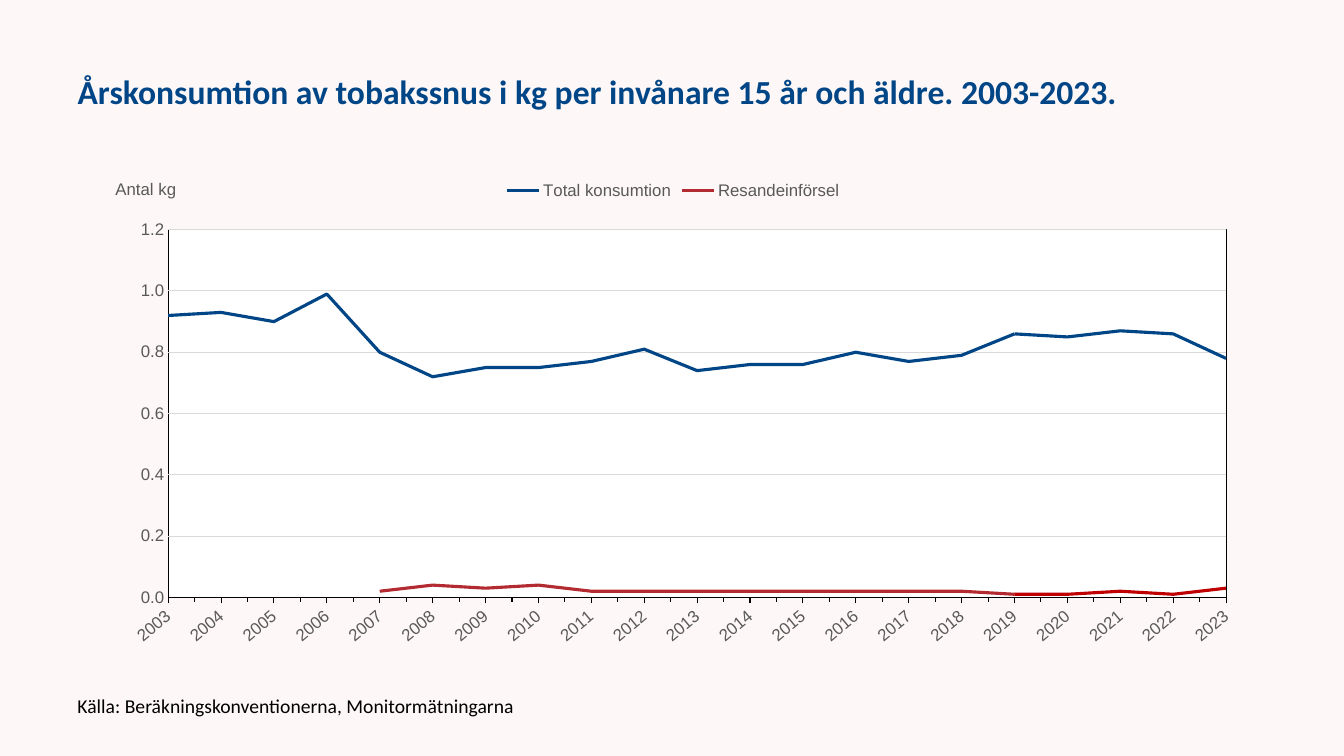
from lxml import etree
from pptx import Presentation
from pptx import util as u
from pptx.chart.data import CategoryChartData
from pptx.dml.color import RGBColor
from pptx.enum import chart as ch, text as t

HUES = {"back": "FEF7F7", "blue": "004687", "red": "B32B31", "dark": "C00000",
        "grey": "595959", "grid": "D9D9D9", "black": "000000", "white": "FFFFFF"}
TITLE = "Årskonsumtion av tobakssnus i kg per invånare 15 år och äldre. 2003-2023."
SOURCE = "Källa: Beräkningskonventionerna, Monitormätningarna"
UNIT = "Antal kg"
YEARS = range(2003, 2024)
LINES = [
    ("Total konsumtion", "blue", 2003,
     [0.92, 0.93, 0.9, 0.99, 0.8, 0.72, 0.75, 0.75, 0.77, 0.81, 0.74,
      0.76, 0.76, 0.8, 0.77, 0.79, 0.86]),
    ("Series 2", "blue", 2019, [0.86, 0.85, 0.87, 0.86, 0.78]),
    ("Resandeinförsel", "red", 2007,
     [0.02, 0.04, 0.03, 0.04, 0.02, 0.02, 0.02, 0.02, 0.02, 0.02, 0.02, 0.02, 0.01]),
    ("Series 4", "dark", 2019, [0.01, 0.01, 0.02, 0.01, 0.03]),
]
HIDDEN = (1, 3)
WIDE, HIGH, LEFT = 13.33, 7.5, 0.67
SPOTS = {"title": (LEFT, 0.3, 12, 1.25), "chart": (LEFT, 1.69, 12.02, 4.95),
         "source": (LEFT, 6.83, 6, 0.37)}
PLOT = {"layoutTarget": "inner", "xMode": "edge", "yMode": "edge",
        "x": 0.083, "y": 0.119, "w": 0.873, "h": 0.737}
LABEL = {"xMode": "edge", "yMode": "edge", "x": 0.037, "y": 0.01}
NS = {"c": "http://schemas.openxmlformats.org/drawingml/2006/chart",
      "a": "http://schemas.openxmlformats.org/drawingml/2006/main"}


def color(name):
    return RGBColor.from_string(HUES[name])


def setall(item, **values):
    for key, value in values.items():
        setattr(item, key, value)


def style(font, hue, size, name="Arial", bold=False):
    setall(font, size=u.Pt(size), name=name, bold=bold)
    font.color.rgb = color(hue)


def stroke(line, hue, width):
    line.color.rgb = color(hue)
    line.width = u.Pt(width)


def node(body):
    spaces = " ".join(f'xmlns:{key}="{uri}"' for key, uri in NS.items())
    return etree.fromstring(f"<c:box {spaces}>{body}</c:box>")[0]


def place(parent, spot, index):
    for old in parent.findall("c:layout", NS):
        parent.remove(old)
    body = "".join(f'<c:{key} val="{value}"/>' for key, value in spot.items())
    parent.insert(index, node(f"<c:layout><c:manualLayout>{body}</c:manualLayout></c:layout>"))


def write(shape, words, hue, size, bold=False):
    frame = shape.text_frame
    setall(frame, text=words, word_wrap=True, vertical_anchor=t.MSO_ANCHOR.MIDDLE)
    para = frame.paragraphs[0]
    setall(para, line_spacing=0.9, alignment=t.PP_ALIGN.LEFT)
    style(para.runs[0].font, hue, size, "Calibri", bold)


def draw(slide):
    data = CategoryChartData(number_format="0.00")
    data.categories = [str(year) for year in YEARS]
    for name, _, start, values in LINES:
        before = [None] * (start - YEARS[0])
        after = [None] * (len(YEARS) - len(before) - len(values))
        data.add_series(name, before + values + after)
    box = [u.Inches(n) for n in SPOTS["chart"]]
    chart = slide.shapes.add_chart(ch.XL_CHART_TYPE.LINE, *box, data).chart
    style(chart.font, "black", 12)
    setall(chart, has_title=False, has_legend=True)
    chart.plots[0].vary_by_categories = False
    for series, (_, hue, _, _) in zip(chart.plots[0].series, LINES):
        series.smooth = False
        stroke(series.format.line, hue, 2.25)

    legend = chart.legend
    setall(legend, position=ch.XL_LEGEND_POSITION.TOP, include_in_layout=False)
    style(legend.font, "grey", 12)
    mark = chart.element.find(".//c:legendPos", NS)
    for index in reversed(HIDDEN):
        mark.addnext(node(f'<c:legendEntry><c:idx val="{index}"/><c:delete val="1"/></c:legendEntry>'))

    years, kilos = chart.category_axis, chart.value_axis
    ticks = ch.XL_TICK_MARK
    setall(years, major_tick_mark=ticks.OUTSIDE, minor_tick_mark=ticks.OUTSIDE,
           has_major_gridlines=False)
    setall(kilos, major_tick_mark=ticks.NONE, minor_tick_mark=ticks.NONE,
           minimum_scale=0, maximum_scale=1.2, major_unit=0.2, has_major_gridlines=True)
    setall(kilos.tick_labels, number_format="0.0", number_format_is_linked=False)
    for axis in (years, kilos):
        axis.crosses = ch.XL_AXIS_CROSSES.AUTOMATIC
        style(axis.tick_labels.font, "grey", 12)
    stroke(years.format.line, "black", 0.75)
    kilos.format.line.fill.background()
    stroke(kilos.major_gridlines.format.line, "grid", 0.75)
    chart.element.find(".//c:catAx/c:txPr/a:bodyPr", NS).set("rot", str(-40 * 60000))
    chart.element.find(".//c:valAx/c:crosses", NS).addnext(
        node('<c:crossBetween val="midCat"/>'))

    frame = years.axis_title.text_frame
    frame.text = UNIT
    style(frame.paragraphs[0].runs[0].font, "grey", 12)
    place(chart.element.find(".//c:catAx/c:title", NS), LABEL, 1)

    area = chart.element.find(".//c:plotArea", NS)
    place(area, PLOT, 0)
    area.append(node(
        f'<c:spPr><a:solidFill><a:srgbClr val="{HUES["white"]}"/></a:solidFill>'
        f'<a:ln w="{u.Pt(0.75)}"><a:solidFill><a:srgbClr val="{HUES["black"]}"/>'
        '</a:solidFill></a:ln></c:spPr>'))
    chart.element.find("c:chart", NS).addnext(
        node("<c:spPr><a:noFill/><a:ln><a:noFill/></a:ln></c:spPr>"))


def main():
    deck = Presentation()
    setall(deck, slide_width=u.Inches(WIDE), slide_height=u.Inches(HIGH))
    slide = deck.slides.add_slide(deck.slide_layouts[5])
    slide.background.fill.solid()
    slide.background.fill.fore_color.rgb = color("back")
    title = slide.shapes.title
    setall(title, **dict(zip(("left", "top", "width", "height"),
                             map(u.Inches, SPOTS["title"]))))
    write(title, TITLE, "blue", 24, True)
    draw(slide)
    source = slide.shapes.add_textbox(*map(u.Inches, SPOTS["source"]))
    write(source, SOURCE, "black", 14)
    deck.save("out.pptx")


if __name__ == "__main__":
    main()
